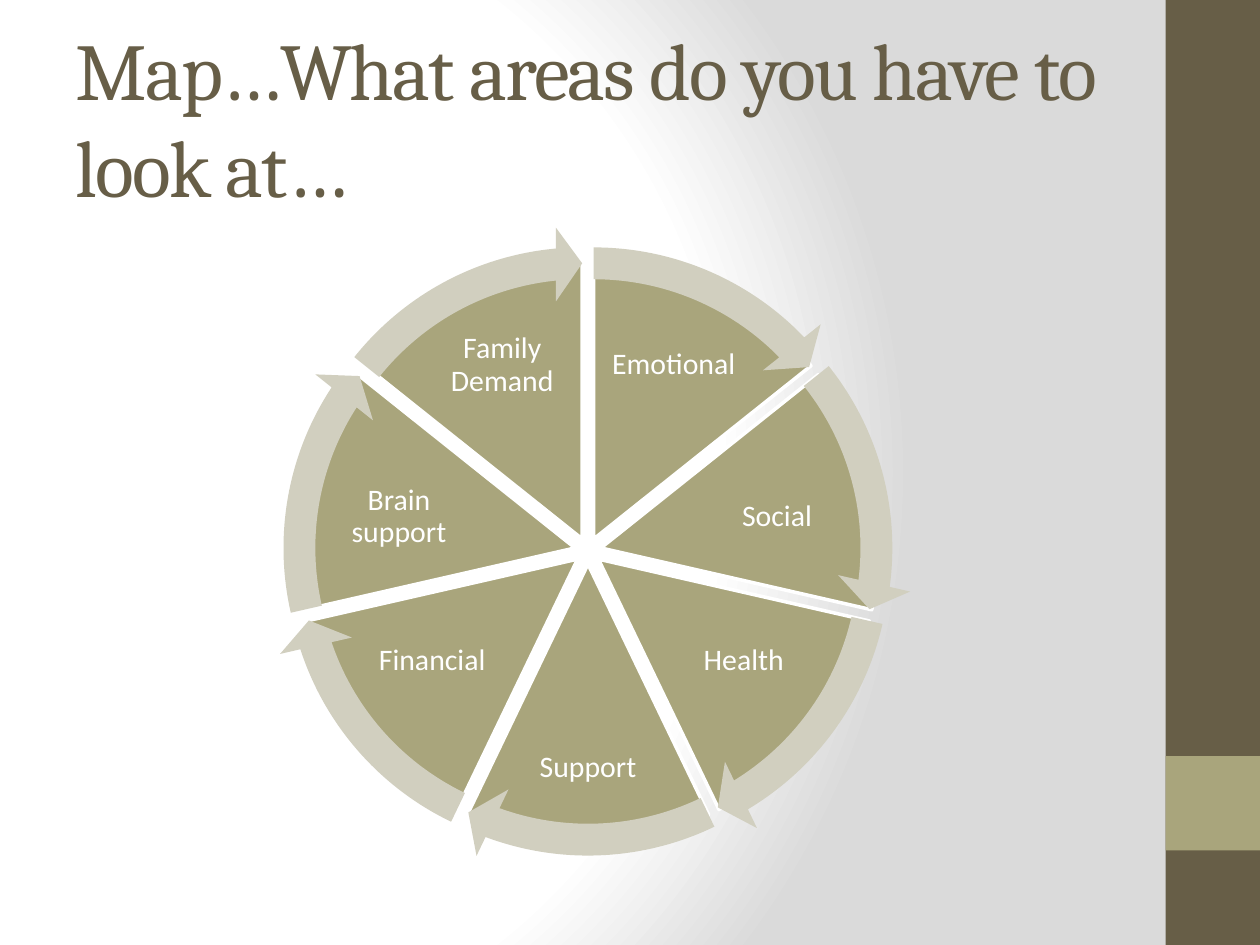
from math import cos, pi, sin

from pptx import Presentation
from pptx.dml.color import RGBColor
from pptx.enum.shapes import MSO_SHAPE
from pptx.enum.text import MSO_ANCHOR, MSO_AUTO_SIZE, PP_ALIGN
from pptx.oxml import parse_xml
from pptx.util import Pt

RECTANGLE = MSO_SHAPE.RECTANGLE
PIE = MSO_SHAPE.PIE
ARROW = MSO_SHAPE.CIRCULAR_ARROW
MIDDLE = MSO_ANCHOR.MIDDLE
NO_AUTOFIT = MSO_AUTO_SIZE.NONE
CENTER = PP_ALIGN.CENTER
LEFT = PP_ALIGN.LEFT

MAIN_NS = "http://schemas.openxmlformats.org/drawingml/2006/main"
SLIDE_NS = "http://schemas.openxmlformats.org/presentationml/2006/main"
GRADIENT_STOPS = [(0, "FFFFFF"), (75, "FFFFFF"), (100, "DADADA")]

CENTER_X, CENTER_Y = 336, 314.8
PIE_SIZE, ARROW_SIZE = 317.5, 357.1
GAP = 7.56
FULL_TURN, TOP_ANGLE = 216, 162
ARROW_TIP = 3.28

RIGHT_LABELS = [
    ("Emotional", 49, 208.8, 75.6, 60.5),
    ("Social", 108, 295.6, 87, 52.5),
    ("Health", 89, 377.6, 75.6, 58.3),
]
BOTTOM_LABEL = ("Support", 0, 438.8, 73.4, 52.5)
LEFT_NAMES = ["Financial", "Brain support", "Family Demand"]
LEFT_LABELS = [
    (name, -offset, y, width, height)
    for name, (_, offset, y, width, height) in zip(LEFT_NAMES, reversed(RIGHT_LABELS))
]
LABELS = RIGHT_LABELS + [BOTTOM_LABEL] + LEFT_LABELS
STEP = FULL_TURN / len(LABELS)


def color(value):
    return RGBColor.from_string(value)


class Painter:
    dark, olive, pale, white = "675E47", "A9A57C", "D1CFBF", "FFFFFF"
    heading_font, body_font = "Cambria", "Calibri"

    def __init__(self, page):
        self.page = page

    def background(self):
        stops = "".join(
            f'<a:gs pos="{place * 1000}"><a:srgbClr val="{value}"/></a:gs>'
            for place, value in GRADIENT_STOPS
        )
        backdrop = parse_xml(
            f'<p:bg xmlns:p="{SLIDE_NS}" xmlns:a="{MAIN_NS}"><p:bgPr>'
            f'<a:gradFill rotWithShape="1"><a:gsLst>{stops}</a:gsLst>'
            '<a:path path="circle">'
            '<a:fillToRect l="20000" t="50000" r="100000" b="50000"/>'
            "</a:path></a:gradFill><a:effectLst/></p:bgPr></p:bg>"
        )
        self.page.element.cSld.insert(0, backdrop)

    def shape(self, kind, left, top, width, height, fill, adjustments=(), line=None):
        shape = self.page.shapes.add_shape(
            kind, Pt(left), Pt(top), Pt(width), Pt(height)
        )
        shape.shadow.inherit = False
        shape.fill.solid()
        shape.fill.fore_color.rgb = color(fill)
        if line:
            shape.line.color.rgb = color(line)
            shape.line.width = Pt(2)
        else:
            shape.line.fill.background()
        for index, value in enumerate(adjustments):
            shape.adjustments[index] = value

    def wheel_part(self, kind, index, size, fill, adjustments, line=None):
        direction = 2 * pi * (index + 0.5) / len(LABELS)
        left = CENTER_X + GAP * sin(direction) - size / 2
        top = CENTER_Y - GAP * cos(direction) - size / 2
        self.shape(kind, left, top, size, size, fill, adjustments, line)

    def wedge(self, index):
        start = TOP_ANGLE + index * STEP
        angles = [start % FULL_TURN, (start + STEP) % FULL_TURN]
        self.wheel_part(PIE, index, PIE_SIZE, self.olive, angles, self.white)

    def arrow(self, index):
        start = TOP_ANGLE + index * STEP
        end = (start + STEP - ARROW_TIP) % FULL_TURN
        adjustments = [0.051, ARROW_TIP, end, start % FULL_TURN, 0.059]
        self.wheel_part(ARROW, index, ARROW_SIZE, self.pale, adjustments)

    def label(self, text, offset, y, width, height):
        box = self.page.shapes.add_textbox(
            Pt(CENTER_X + offset - width / 2), Pt(y - height / 2), Pt(width), Pt(height)
        )
        frame = box.text_frame
        frame.margin_left = frame.margin_right = Pt(1.5)
        frame.margin_top = frame.margin_bottom = Pt(1.5)
        para = self.fill_frame(frame, text, self.body_font, 17, self.white, CENTER)
        para.line_spacing = 0.9

    def title(self, text):
        box = self.page.shapes.title
        box.left, box.top, box.width, box.height = Pt(36), Pt(21.6), Pt(600), Pt(90)
        frame = box.text_frame
        frame.auto_size = NO_AUTOFIT
        para = self.fill_frame(frame, text, self.heading_font, 46, self.dark, LEFT)
        para.runs[0]._r.get_or_add_rPr().set("spc", "-100")

    def fill_frame(self, frame, text, font, size, value, alignment):
        frame.word_wrap = True
        frame.vertical_anchor = MIDDLE
        para = frame.paragraphs[0]
        para.text = text
        para.alignment = alignment
        para.font.name = font
        para.font.size = Pt(size)
        para.font.color.rgb = color(value)
        return para


def main():
    deck = Presentation()
    deck.slide_width, deck.slide_height = Pt(720), Pt(540)
    painter = Painter(deck.slides.add_slide(deck.slide_layouts[5]))
    painter.background()
    painter.shape(RECTANGLE, 666, 0, 54, 540, painter.dark)
    painter.shape(RECTANGLE, 666, 432, 54, 54, painter.olive)
    painter.title("Map…What areas do you have to look at…")
    for index, label in enumerate(LABELS):
        painter.wedge(index)
        painter.label(*label)
    for index in range(len(LABELS)):
        painter.arrow(index)
    deck.save("out.pptx")


if __name__ == "__main__":
    main()
